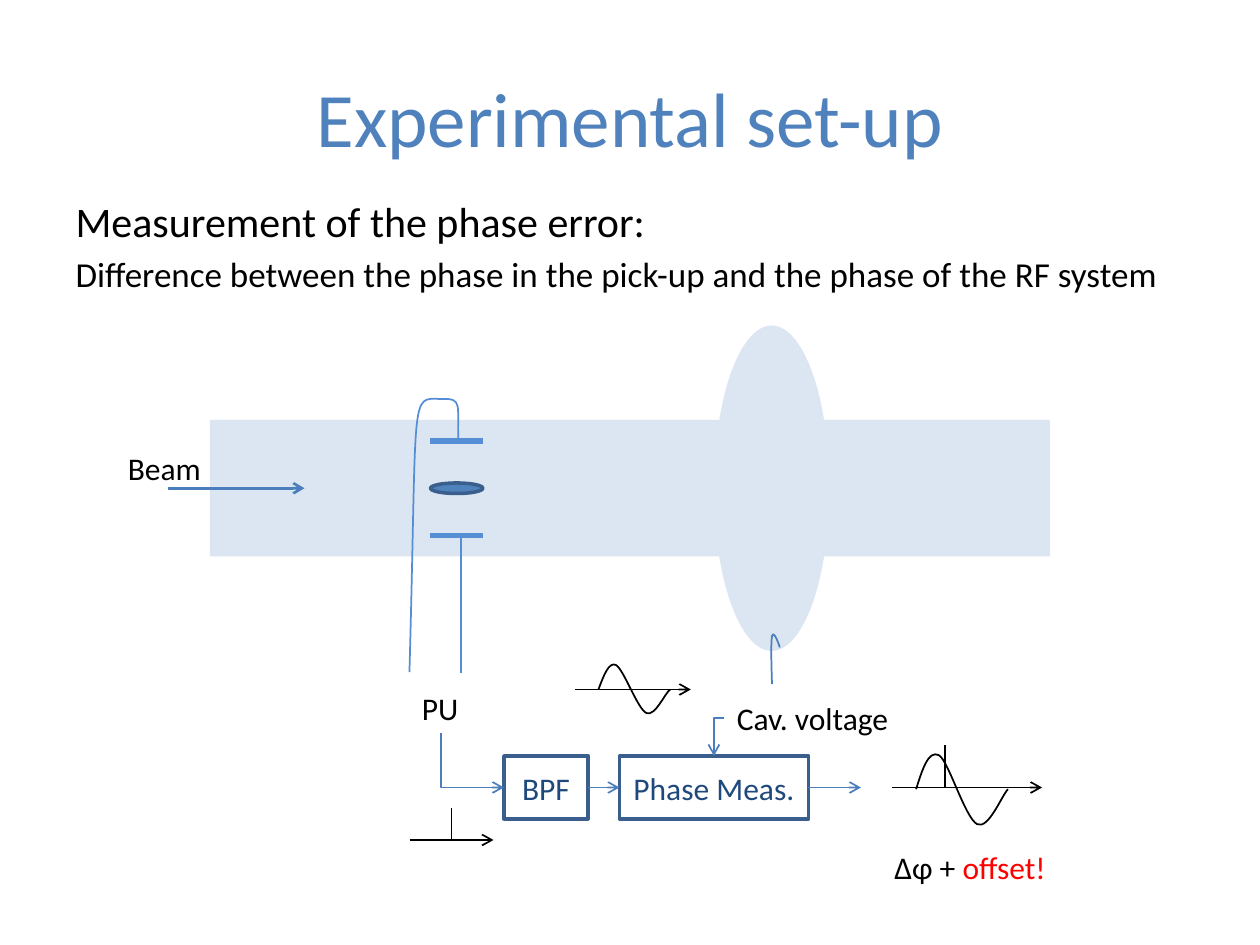
from lxml.etree import SubElement
from pptx import Presentation
from pptx.dml.color import RGBColor as RGB
from pptx.enum.shapes import MSO_CONNECTOR as Link, MSO_SHAPE as Form
from pptx.enum.text import MSO_ANCHOR as Anchor, MSO_AUTO_SIZE as Fit, PP_ALIGN as Align
from pptx.oxml.ns import qn
from pptx.util import Pt


class Theme:
    font = "Calibri"
    title, head, body, label = 44, 24, 20, 18
    blue, wire, plate, edge = "4F81BD", "4B7EBC", "558ED5", "3A5F8C"
    navy, pale, white, black, red = "1F497D", "DCE6F2", "FFFFFF", "000000", "FF0000"


T = Theme

# Content: lengths in points
TITLE = ("Experimental set-up", (36, 21.6, 648, 90))
BODY = (36, 108, 648, 356.4)
ITEMS = [
    ("Measurement of the phase error:", T.head),
    ("Difference between the phase in the pick-up and the phase of the RF system", T.body),
]
PIPE = [(Form.RECTANGLE, (120, 240, 480, 78)), (Form.OVAL, (408, 186, 66, 186))]
BUNCH = (246, 276, 30, 6)
BOXES = {"BPF": (288, 432, 48, 36), "Phase Meas. ": (354, 432, 108, 36)}
LABELS = [  # runs of (text, colour), then the frame
    ([("Beam", T.black)], (66, 253, 57, 29)),
    ([("PU", T.black)], (234, 390, 35, 29)),
    ([("Cav. voltage", T.black)], (414, 396, 102, 29)),
    ([("Δφ + ", T.black), ("offset!", T.red)], (504, 481, 102, 29)),
]
LINES = [  # from, to, colour, width, arrow
    ((246, 252), (276, 252), T.plate, 3, False),
    ((246, 306), (276, 306), T.plate, 3, False),
    ((263.5, 307.5), (263.5, 384.5), T.plate, 1, False),
    ((96, 279), (174, 279), T.wire, 1.5, True),
    ((234, 480), (282, 480), T.black, 1, True),
    ((258, 462), (258, 480), T.black, 1, False),
    ((328.8, 394), (394.8, 394), T.black, 1, True),
    ((510, 450), (595.5, 450), T.black, 1, True),
    ((540, 426), (540, 450), T.black, 1, False),
]
CURVES = [  # colour, then start point and Bézier triples
    (T.wire, [(441.2, 391), (440.8, 379.5), (440.5, 367), (441.2, 363.5),
              (442, 360), (444.8, 367), (445.6, 370)]),
    (T.plate, [(262, 253.2), (261, 231), (265, 227.5), (252, 228),
               (234, 227.5), (238.5, 222), (234, 384)]),
    (T.black, [(342, 394), (345, 386), (348, 378), (352, 380), (356.5, 382.5), (364.5, 405.5),
               (369.5, 407.5), (374.5, 409.5), (380, 396), (383, 394)]),
    (T.black, [(523.5, 451), (527, 440), (530.5, 428.5), (536.5, 431.5), (542, 434.5),
               (551.5, 467.5), (558.5, 471), (565, 474), (572.5, 454.5), (576, 451)]),
]

deck = Presentation()
deck.slide_width, deck.slide_height = Pt(720), Pt(540)
slide = deck.slides.add_slide(deck.slide_layouts[1])
shapes = slide.shapes


def pts(vals):
    return [Pt(v) for v in vals]


def place(shape, box):
    shape.left, shape.top, shape.width, shape.height = pts(box)


def style(run, size, color):
    run.font.name, run.font.size = T.font, Pt(size)
    run.font.color.rgb = RGB.from_string(color)


def stroke(shape, color, width):
    shape.line.color.rgb = RGB.from_string(color)
    shape.line.width = Pt(width)


def solid(form, box, fill, edge=None, home=shapes):
    shape = home.add_shape(form, *pts(box))
    shape.shadow.inherit = False
    shape.fill.solid()
    shape.fill.fore_color.rgb = RGB.from_string(fill)
    if edge:
        stroke(shape, edge, 2)
    else:
        shape.line.fill.background()
    return shape


def link(start, end, color, width=1, arrow=True, kind=Link.STRAIGHT):
    wire = shapes.add_connector(kind, *pts(start + end))
    stroke(wire, color, width)
    if arrow:
        SubElement(wire.line._get_or_add_ln(), qn("a:tailEnd"), type="arrow")
    SubElement(wire._element.spPr, qn("a:effectLst"))
    return wire


def elbow(start, end, turn=0):
    """One-bend arrow; a turn of 270 leaves downwards, else sideways."""
    (x1, y1), (x2, y2) = start, end
    if turn:
        mx, my = (x1 + x2) / 2, (y1 + y2) / 2
        dx, dy = (y2 - y1) / 2, (x2 - x1) / 2
        start, end = (mx + dx, my - dy), (mx - dx, my + dy)
    props = link(start, end, T.wire, kind=Link.ELBOW)._element.spPr
    props.find(qn("a:prstGeom")).set("prst", "bentConnector2")
    if turn:
        props.find(qn("a:xfrm")).set("rot", str(turn * 60000))


def curve(color, nodes):
    """Build the node outline, then turn each three segments into one Bézier."""
    first, *rest = [tuple(pts(p)) for p in nodes]
    pen = shapes.build_freeform(*first)
    pen.add_line_segments(rest, close=False)
    shape = pen.convert_to_shape()
    shape.shadow.inherit = False
    shape.fill.background()
    stroke(shape, color, 1)
    track = next(shape._element.iter(qn("a:path")))
    legs = track.findall(qn("a:lnTo"))
    for i in range(0, len(legs), 3):
        bend = SubElement(track, qn("a:cubicBezTo"))
        for leg in legs[i:i + 3]:
            bend.append(leg[0])
            track.remove(leg)


# Title and body
title, body = shapes.title, slide.placeholders[1]
place(title, TITLE[1])
title.text_frame.text = TITLE[0]
style(title.text_frame.paragraphs[0].runs[0], T.title, T.blue)
place(body, BODY)
body.text_frame.text = "\n".join(text for text, _ in ITEMS)
for para, (_, size) in zip(body.text_frame.paragraphs, ITEMS):
    props = para._p.get_or_add_pPr()
    props.set("marL", str(Pt(27)))
    props.set("indent", str(-Pt(27)))
    SubElement(props, qn("a:buNone"))
    style(para.runs[0], size, T.black)

# Beam pipe with cavity
pipe = shapes.add_group_shape()
for form, box in PIPE:
    solid(form, box, T.pale, home=pipe.shapes)

# Plates, axes, cables and waves
for item in LINES:
    link(*item)
for color, nodes in CURVES:
    curve(color, nodes)
solid(Form.OVAL, BUNCH, T.blue, T.edge)

# Signal chain
blocks = []
for text, box in BOXES.items():
    block = solid(Form.RECTANGLE, box, T.white, T.edge)
    frame = block.text_frame
    frame.text, frame.vertical_anchor = text, Anchor.MIDDLE
    frame.paragraphs[0].alignment = Align.CENTER
    style(frame.paragraphs[0].runs[0], T.label, T.navy)
    blocks.append(block)
band, meter = blocks
wire = link((336, 450), (354, 450), T.wire)
wire.begin_connect(band, 3)
wire.end_connect(meter, 1)
link((462, 450), (492, 450), T.wire).begin_connect(meter, 3)
elbow((252, 419), (288, 450), 270)
elbow((414, 410.5), (408, 432))

# Labels
for runs, box in LABELS:
    frame = shapes.add_textbox(*pts(box)).text_frame
    frame.word_wrap, frame.auto_size = False, Fit.SHAPE_TO_FIT_TEXT
    for text, color in runs:
        run = frame.paragraphs[0].add_run()
        run.text = text
        style(run, T.label, color)

deck.save("out.pptx")
